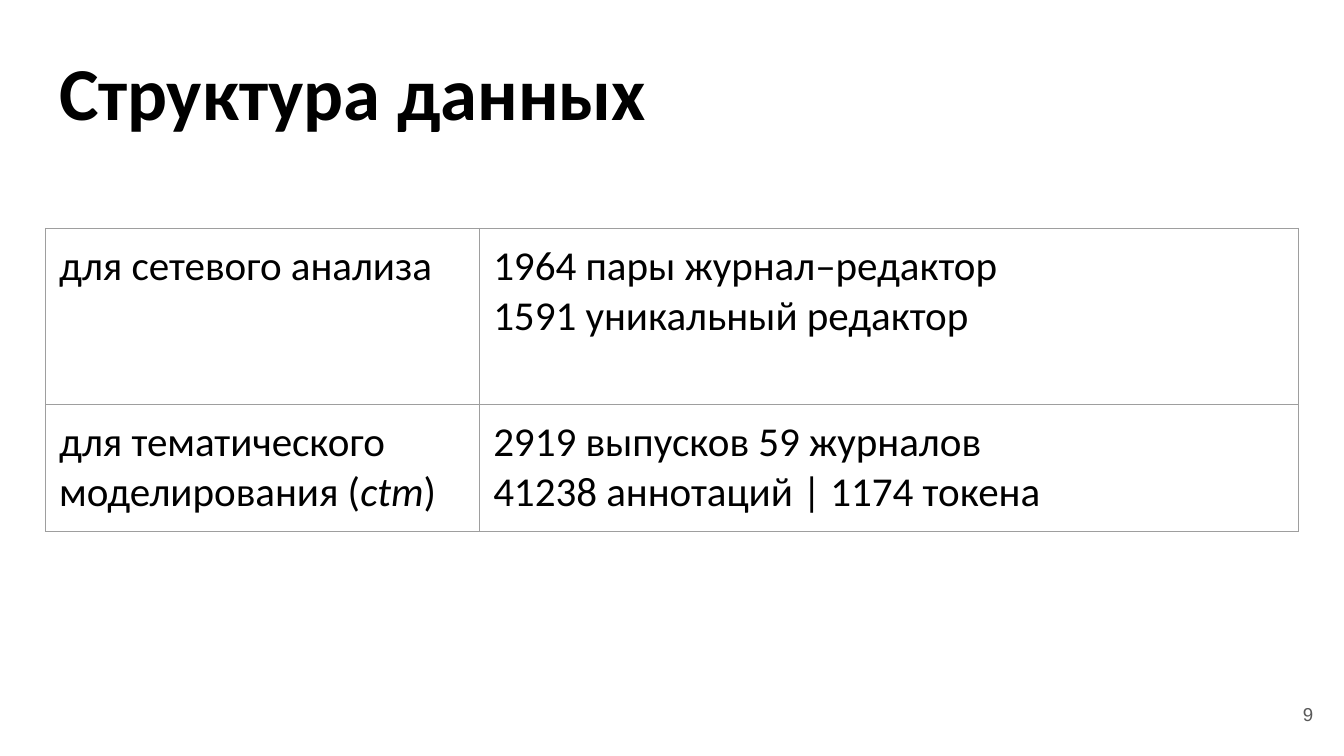
"""Build the slide that describes the structure of the data."""
from dataclasses import dataclass

import lxml.etree
import pptx
import pptx.dml.color
import pptx.enum.text
import pptx.oxml.ns
import pptx.util

Inches = pptx.util.Inches
Align = pptx.enum.text.PP_ALIGN
Anchor = pptx.enum.text.MSO_ANCHOR


@dataclass(frozen=True)
class Theme:
    """Colours, fonts and type sizes."""
    ink: str = "000000"
    muted: str = "595959"
    border: str = "9E9E9E"
    paper: str = "FFFFFF"
    body_font: str = "Calibri"
    number_font: str = "Arial"
    title_size: int = 40
    body_size: int = 22
    number_size: int = 10
    border_width: float = 0.75
    inset: float = 0.1


def write_text(frame, lines, *, font, size, color, bold=False, align=Align.LEFT):
    """Write lines of (text, italic) runs into one paragraph."""
    paragraph = frame.paragraphs[0]
    paragraph.alignment = align
    for index, line in enumerate(lines):
        if index:
            paragraph.add_line_break()
        for text, italic in line:
            run = paragraph.add_run()
            run.text = text
            run.font.name = font
            run.font.size = pptx.util.Pt(size)
            run.font.bold = bold
            run.font.italic = italic
            run.font.color.rgb = pptx.dml.color.RGBColor.from_string(color)


def plain(*lines):
    """Return upright lines of one run each."""
    return [[(line, False)] for line in lines]


class SlideBuilder:
    """Hold the theme and the current slide."""

    def __init__(self, presentation, theme):
        """Add a title-only slide with a plain background."""
        self.theme = theme
        self.slide = presentation.slides.add_slide(presentation.slide_layouts[5])
        fill = self.slide.background.fill
        fill.solid()
        fill.fore_color.rgb = pptx.dml.color.RGBColor.from_string(theme.paper)

    def set_margins(self, holder):
        """Give a text frame or cell equal insets."""
        for side in ("left", "top", "right", "bottom"):
            setattr(holder, f"margin_{side}", Inches(self.theme.inset))

    def prepare_frame(self, shape, anchor):
        """Set wrapping, insets and anchor, and return the text frame."""
        frame = shape.text_frame
        frame.word_wrap = True
        frame.auto_size = pptx.enum.text.MSO_AUTO_SIZE.NONE
        frame.vertical_anchor = anchor
        self.set_margins(frame)
        return frame

    def title(self, text, left, top, width, height):
        """Place and fill the title placeholder."""
        shape = self.slide.shapes.title
        shape.left, shape.top = Inches(left), Inches(top)
        shape.width, shape.height = Inches(width), Inches(height)
        write_text(self.prepare_frame(shape, Anchor.TOP), plain(text),
                   font=self.theme.body_font, size=self.theme.title_size,
                   color=self.theme.ink, bold=True)

    def page_number(self, text, left, top, width, height):
        """Add the page number."""
        shape = self.slide.shapes.add_textbox(
            Inches(left), Inches(top), Inches(width), Inches(height))
        write_text(self.prepare_frame(shape, Anchor.MIDDLE), plain(text),
                   font=self.theme.number_font, size=self.theme.number_size,
                   color=self.theme.muted, align=Align.RIGHT)

    def border_cell(self, cell):
        """Draw a thin line on each side of a cell."""
        properties = cell._tc.get_or_add_tcPr()
        qn = pptx.oxml.ns.qn
        for position, side in enumerate(("lnL", "lnR", "lnT", "lnB")):
            line = lxml.etree.Element(
                qn(f"a:{side}"), w=str(pptx.util.Pt(self.theme.border_width)))
            fill = lxml.etree.SubElement(line, qn("a:solidFill"))
            lxml.etree.SubElement(fill, qn("a:srgbClr"), val=self.theme.border)
            properties.insert(position, line)

    def table(self, rows, left, top, widths, heights):
        """Add a bordered table without a fill."""
        table = self.slide.shapes.add_table(
            len(rows), len(widths), Inches(left), Inches(top),
            Inches(sum(widths)), Inches(sum(heights))).table
        table.first_row = table.horz_banding = False
        for column, width in zip(table.columns, widths):
            column.width = Inches(width)
        for row, height, contents in zip(table.rows, heights, rows):
            row.height = Inches(height)
            for cell, lines in zip(row.cells, contents):
                cell.fill.background()
                self.set_margins(cell)
                self.border_cell(cell)
                write_text(cell.text_frame, lines, font=self.theme.body_font,
                           size=self.theme.body_size, color=self.theme.ink)


def main():
    """Build and save the presentation."""
    presentation = pptx.Presentation()
    presentation.slide_width = Inches(10)
    presentation.slide_height = Inches(10 * 9 / 16)
    builder = SlideBuilder(presentation, Theme())
    builder.title("Структура данных", 0.34, 0.24, 9.32, 0.63)
    modelling = [[("для тематического моделирования (", False),
                  ("ctm", True), (")", False)]]
    builder.table(
        [[plain("для сетевого анализа"),
          plain("1964 пары журнал–редактор", "1591 уникальный редактор")],
         [modelling,
          plain("2919 выпусков 59 журналов", "41238 аннотаций | 1174 токена")]],
        left=0.34, top=1.7, widths=(3.23, 6.09), heights=(1.31, 0.94))
    builder.page_number("9", 9.27, 5.1, 0.6, 0.43)
    presentation.save("out.pptx")


if __name__ == "__main__":
    main()
